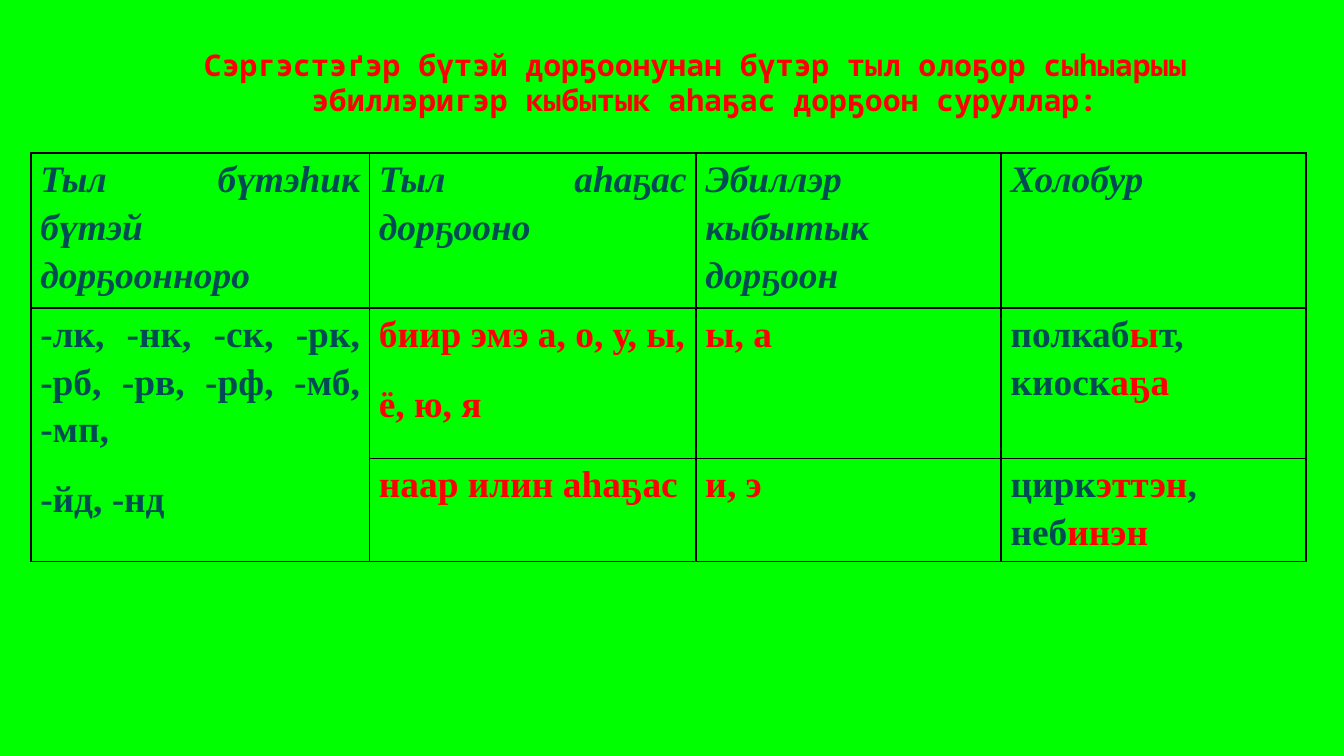
from dataclasses import dataclass

import lxml.etree
import pptx
import pptx.dml.color
import pptx.enum.text
import pptx.oxml.ns
import pptx.util

Inches = pptx.util.Inches
Pt = pptx.util.Pt
Align = pptx.enum.text.PP_ALIGN
qn = pptx.oxml.ns.qn


@dataclass
class Theme:
    background: str = "00FF00"
    text: str = "004C54"
    accent: str = "FF0000"
    border: str = "000000"
    title_font: str = "Noto Sans Mono"
    table_font: str = "Times New Roman"
    title_size: int = 16
    table_size: int = 20


class SlideBuilder:
    def __init__(self, deck, theme):
        self.theme = theme
        self.slide = deck.slides.add_slide(deck.slide_layouts[5])
        fill = self.slide.background.fill
        fill.solid()
        fill.fore_color.rgb = self.color(theme.background)

    def color(self, value):
        return pptx.dml.color.RGBColor.from_string(value)

    def style(self, font, name, size, italic=False):
        font.name, font.size = name, Pt(size)
        font.bold, font.italic = True, italic

    def title(self, lines, left, top, width, height, indent):
        box = self.slide.shapes.title
        box.left, box.top = Inches(left), Inches(top)
        box.width, box.height = Inches(width), Inches(height)
        frame = box.text_frame
        frame.text = "\n".join(lines)
        frame.word_wrap = True
        frame.auto_size = pptx.enum.text.MSO_AUTO_SIZE.SHAPE_TO_FIT_TEXT
        frame.vertical_anchor = pptx.enum.text.MSO_ANCHOR.MIDDLE
        for para in frame.paragraphs:
            para.alignment = Align.CENTER
            para._p.get_or_add_pPr().set("indent", str(Inches(indent)))
            self.style(para.font, self.theme.title_font, self.theme.title_size)
            para.font.color.rgb = self.color(self.theme.accent)

    def table(self, rows, left, top, widths, heights):
        frame = self.slide.shapes.add_table(
            len(rows), len(widths), Inches(left), Inches(top),
            Inches(sum(widths)), Inches(sum(heights)))
        table = frame.table
        table.first_row = table.horz_banding = False
        for column, width in zip(table.columns, widths):
            column.width = Inches(width)
        for row, height in zip(table.rows, heights):
            row.height = Inches(height)
        for row_index, row in enumerate(rows):
            for column_index, text in enumerate(row):
                cell = table.cell(row_index, column_index)
                self.cell(cell, text, italic=row_index == 0)
        return table

    def cell(self, cell, text, italic):
        """Fill a cell; stretches between asterisks take the accent colour."""
        cell.margin_left = cell.margin_right = Inches(0.07)
        cell.margin_top = cell.margin_bottom = 0
        self.borders(cell)
        cell.fill.background()
        for index, line in enumerate(text.split("\n")):
            frame = cell.text_frame
            para = frame.add_paragraph() if index else frame.paragraphs[0]
            para.alignment = Align.JUSTIFY
            para.line_spacing = 1.15
            para.space_after = Pt(12)
            self.style(para.font, self.theme.table_font,
                       self.theme.table_size, italic)
            for part, words in enumerate(line.split("*")):
                if words:
                    span = para.add_run()
                    span.text = words
                    span.font.color.rgb = self.color(
                        self.theme.accent if part % 2 else self.theme.text)

    def borders(self, cell):
        properties = cell._tc.get_or_add_tcPr()
        for side in ("a:lnL", "a:lnR", "a:lnT", "a:lnB"):
            line = lxml.etree.SubElement(properties, qn(side), w=str(Pt(1)))
            fill = lxml.etree.SubElement(line, qn("a:solidFill"))
            lxml.etree.SubElement(fill, qn("a:srgbClr"), val=self.theme.border)


def main():
    # Widescreen page, 16 to 9
    deck = pptx.Presentation()
    deck.slide_width = Inches(10)
    deck.slide_height = deck.slide_width * 9 // 16
    page = SlideBuilder(deck, Theme())

    # Heading rule
    page.title(
        ["Сэргэстэґэр бүтэй дорҕоонунан бүтэр тыл олоҕор сыһыарыы",
         " эбиллэригэр кыбытык аһаҕас дорҕоон суруллар:"],
        left=0, top=0.29, width=9.86, height=0.64, indent=0.49)

    # Linking vowels by word ending
    table = page.table(
        [["Тыл бүтэһик бүтэй дорҕоонноро", "Тыл аһаҕас дорҕооно",
          "Эбиллэр кыбытык дорҕоон", "Холобур"],
         ["-лк, -нк, -ск, -рк, -рб, -рв, -рф, -мб, -мп,\n-йд, -нд",
          "*биир эмэ а, о, у, ы,*\n*ё, ю, я*", "*ы, а*",
          "полкаб*ы*т, киоск*аҕа*"],
         ["", "*наар илин аһаҕас*", "*и, э*", "цирк*эттэн*, неб*инэн*"]],
        left=0.23, top=1.14,
        widths=[2.52, 2.43, 2.27, 2.27], heights=[1.01, 1.12, 0.66])

    # The endings apply to both example rows
    table.cell(1, 0).merge(table.cell(2, 0))

    deck.save("out.pptx")


if __name__ == "__main__":
    main()
